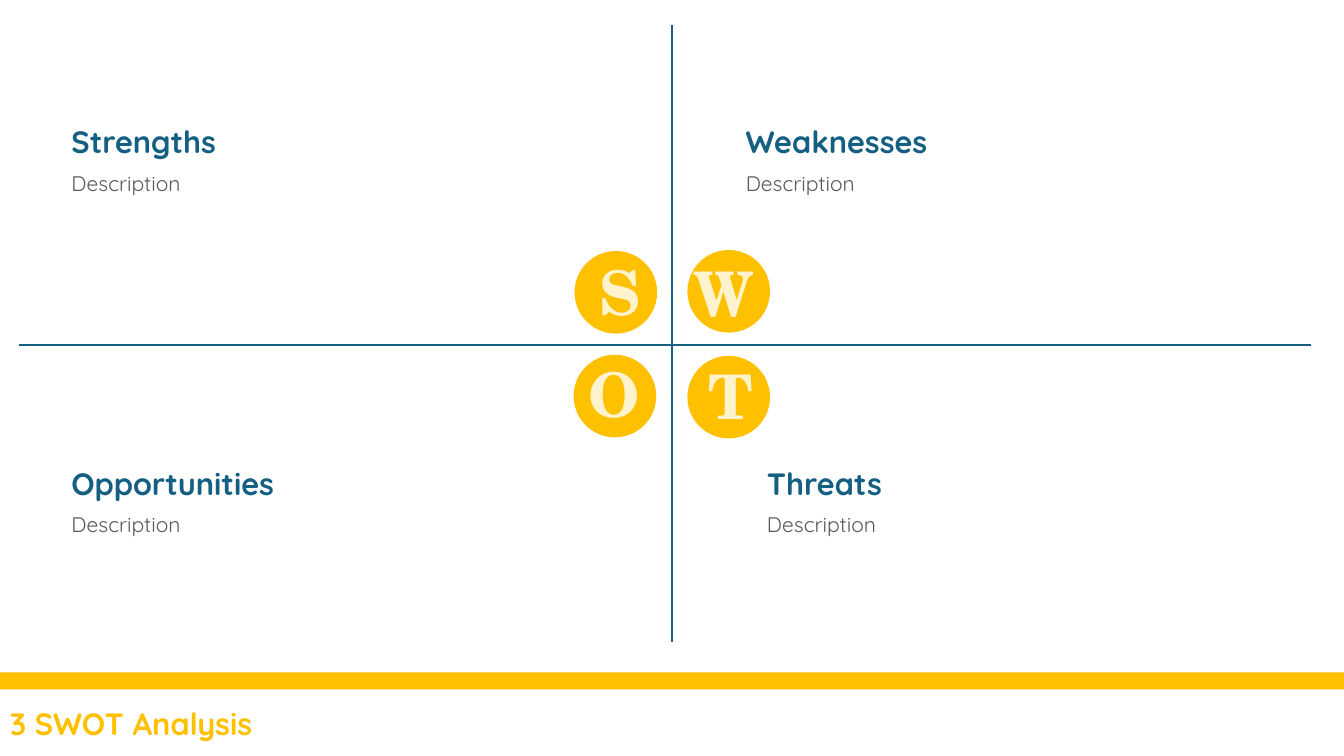
"""Build a SWOT analysis slide with four quadrants around a central cross."""
import pptx
import pptx.dml.color
import pptx.enum.shapes
import pptx.enum.text
import pptx.oxml.ns
import pptx.util
from lxml import etree

RGBColor = pptx.dml.color.RGBColor
GOLD = RGBColor(0xFF, 0xC0, 0x00)
CREAM = RGBColor(0xFF, 0xF3, 0xCD)
BLUE = RGBColor(0x15, 0x60, 0x82)
GREY = RGBColor(0x59, 0x59, 0x59)

SLIDE_WIDTH = pptx.util.Inches(13.33)
SLIDE_HEIGHT = pptx.util.Inches(7.5)
GRID_STEPS = 100

TITLE_FORMAT = {"name": "Quicksand", "size": pptx.util.Pt(22), "bold": True, "color": GOLD}
HEADING_FORMAT = {**TITLE_FORMAT, "color": BLUE}
DESCRIPTION_FORMAT = {"name": "Quicksand", "size": pptx.util.Pt(15), "bold": False, "color": GREY}
LETTER_FORMAT = {"name": "TeX Gyre Schola", "size": pptx.util.Pt(44), "bold": True, "color": CREAM}

HEADING_HEIGHT = 6.27
DISC_SIZE = (6.15, 10.93)
LETTER_SIZE = (5.03, 11.2)

QUADRANTS = [
    ("Strengths", (4.58, 15.6), (42.75, 33.2), (43.88, 32.93)),
    ("Weaknesses", (54.75, 15.6), (51.15, 33.07), (50.85, 33.07)),
    ("Opportunities", (4.58, 60.8), (42.68, 46.93), (43.05, 46.4)),
    ("Threats", (56.33, 60.8), (51.15, 47.07), (51.98, 46.67)),
]


def place(column, row):
    """Turn a grid column and row into slide lengths."""
    return round(SLIDE_WIDTH * column / GRID_STEPS), round(SLIDE_HEIGHT * row / GRID_STEPS)


def write_text(shape, text, font_format):
    """Put one left-aligned formatted line into a shape."""
    frame_format = {
        "word_wrap": True,
        "auto_size": pptx.enum.text.MSO_AUTO_SIZE.NONE,
        "vertical_anchor": pptx.enum.text.MSO_ANCHOR.TOP,
    }
    for name, value in frame_format.items():
        setattr(shape.text_frame, name, value)
    paragraph = shape.text_frame.paragraphs[0]
    paragraph.alignment = pptx.enum.text.PP_ALIGN.LEFT
    paragraph.line_spacing = 1.0
    paragraph.space_before = pptx.util.Pt(0)
    run = paragraph.add_run()
    run.text = text
    for name, value in font_format.items():
        if name == "color":
            run.font.color.rgb = value
        else:
            setattr(run.font, name, value)


def add_title(slide, text, position, size):
    """Move and fill the title placeholder."""
    title = slide.shapes.title
    title.left, title.top = place(*position)
    title.width, title.height = place(*size)
    write_text(title, text, TITLE_FORMAT)


def add_label(slide, text, position, size, font_format):
    """Add a text box with one formatted line."""
    label = slide.shapes.add_textbox(*place(*position), *place(*size))
    write_text(label, text, font_format)


def add_gold_shape(slide, kind, position, size):
    """Add a plain gold shape."""
    shape = slide.shapes.add_shape(kind, *place(*position), *place(*size))
    shape.shadow.inherit = False
    shape.fill.solid()
    shape.fill.fore_color.rgb = GOLD
    shape.line.fill.background()


def add_axis(slide, start, end):
    """Add one blue line of the cross."""
    axis = slide.shapes.add_connector(
        pptx.enum.shapes.MSO_CONNECTOR.STRAIGHT, *place(*start), *place(*end))
    axis.line.color.rgb = BLUE
    axis.line.width = pptx.util.Pt(1.5)
    properties = axis.element.find(pptx.oxml.ns.qn("p:spPr"))
    etree.SubElement(properties, pptx.oxml.ns.qn("a:effectLst"))


def add_quadrant_text(slide, heading, position):
    """Add a heading with its description below."""
    column, row = position
    add_label(slide, heading, position, (23.93, HEADING_HEIGHT), HEADING_FORMAT)
    add_label(slide, "Description", (column, row + HEADING_HEIGHT), (25, 4.67), DESCRIPTION_FORMAT)


def add_badge(slide, letter, disc_position, letter_position):
    """Add a gold disc with its initial letter."""
    add_gold_shape(slide, pptx.enum.shapes.MSO_SHAPE.OVAL, disc_position, DISC_SIZE)
    add_label(slide, letter, letter_position, LETTER_SIZE, LETTER_FORMAT)


def main():
    """Build and save the slide."""
    presentation = pptx.Presentation()
    presentation.slide_width = SLIDE_WIDTH
    presentation.slide_height = SLIDE_HEIGHT
    slide = presentation.slides.add_slide(presentation.slide_layouts.get_by_name("Title Only"))

    add_gold_shape(slide, pptx.enum.shapes.MSO_SHAPE.RECTANGLE, (0, 88.93), (100, 2.27))
    add_title(slide, "3 SWOT Analysis", (0, 92.53), (68.78, HEADING_HEIGHT))
    add_axis(slide, (50, 3.33), (50, 84.93))
    add_axis(slide, (1.43, 45.6), (97.58, 45.6))
    for heading, text_position, disc_position, letter_position in QUADRANTS:
        add_quadrant_text(slide, heading, text_position)
        add_badge(slide, heading[0], disc_position, letter_position)

    presentation.save("out.pptx")


if __name__ == "__main__":
    main()
